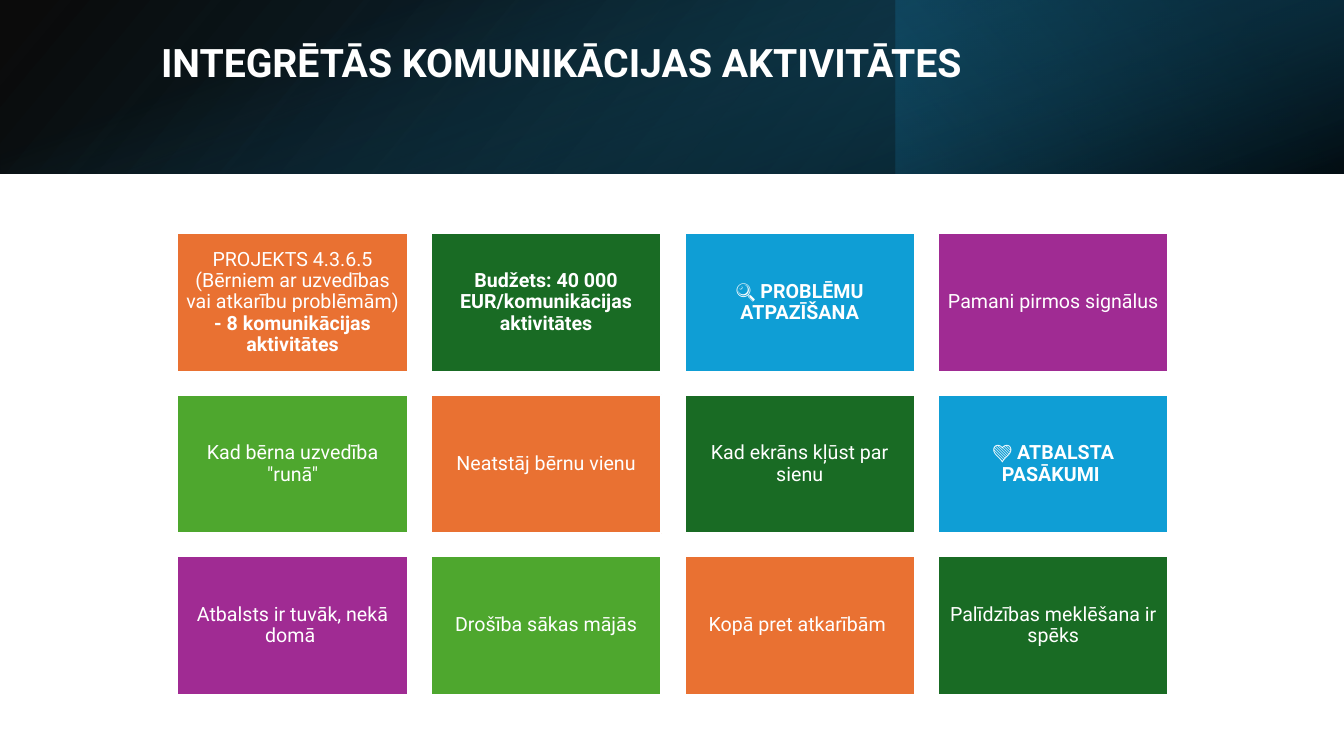
import pptx
import pptx.util
import pptx.dml.color
import pptx.enum.shapes
import pptx.enum.text
import pptx.oxml
import pptx.oxml.ns
from pptx.util import Cm

# Content: each tile is a list of (text, bold) spans
TITLE = "INTEGRĒTĀS KOMUNIKĀCIJAS AKTIVITĀTES"
TILES = [
    [("PROJEKTS 4.3.6.5 (Bērniem ar uzvedības vai atkarību problēmām) ", False),
     ("- 8 komunikācijas aktivitātes", True)],
    [("Budžets: 40 000 EUR/komunikācijas aktivitātes", True)],
    [("🔍 PROBLĒMU ATPAZĪŠANA", True)],
    [("Pamani pirmos signālus", False)],
    [("Kad bērna uzvedība \"runā\"", False)],
    [("Neatstāj bērnu vienu", False)],
    [("Kad ekrāns kļūst par sienu", False)],
    [("💚 ATBALSTA PASĀKUMI ", True)],
    [("Atbalsts ir tuvāk, nekā domā ", False)],
    [("Drošība sākas mājās", False)],
    [("Kopā pret atkarībām ", False)],
    [("Palīdzības meklēšana ir spēks", False)],
]

THEME = {
    "font": "Roboto",
    "title_size": 28,
    "tile_size": 14,
    "text": "FFFFFF",
    "outline": "FFFFFF",
    "tiles": ["E97132", "196B24", "0F9ED5", "A02B93", "4EA72E"],
    # Gradient stops: position %, colour, opacity %
    "band_base": [(0, "000000", 96), (100, "104862", 100)],
    "band_corner": [(19, "0B3041", 68), (100, "156082", 79)],
    "band_shade": [(23, "156082", 0), (99, "000000", 74)],
}

# Layout in centimetres
PAGE_W, PAGE_H = 33.87, 19.05
BAND_H = 4.38
COLUMNS = 4
GRID_LEFT, GRID_TOP = 4.47, 5.88
TILE_W, TILE_H, GAP = 5.81, 3.49, 0.58

RECTANGLE = pptx.enum.shapes.MSO_SHAPE.RECTANGLE
MIDDLE = pptx.enum.text.MSO_ANCHOR.MIDDLE
TOP = pptx.enum.text.MSO_ANCHOR.TOP
CENTER = pptx.enum.text.PP_ALIGN.CENTER
LEFT = pptx.enum.text.PP_ALIGN.LEFT


def colour(code):
    return pptx.dml.color.RGBColor.from_string(code)


def add_box(page, left, top, width, height):
    box = page.shapes.add_shape(RECTANGLE, Cm(left), Cm(top), Cm(width), Cm(height))
    box.shadow.inherit = False
    return box


def add_gradient(page, left, top, width, height, stops, angle, turn=0, mirrored=False):
    box = add_box(page, left, top, width, height)
    box.rotation = turn
    box.line.fill.background()
    properties = box._element.spPr
    if mirrored:
        properties.find(pptx.oxml.ns.qn("a:xfrm")).set("flipH", "1")
    marks = "".join(
        f'<a:gs pos="{position * 1000}"><a:srgbClr val="{code}">'
        f'<a:alpha val="{opacity * 1000}"/></a:srgbClr></a:gs>'
        for position, code, opacity in stops)
    gradient = pptx.oxml.parse_xml(
        f'<a:gradFill {pptx.oxml.ns.nsdecls("a")} rotWithShape="1"><a:gsLst>{marks}</a:gsLst>'
        f'<a:lin ang="{angle * 60000}" scaled="0"/></a:gradFill>')
    properties.find(pptx.oxml.ns.qn("a:prstGeom")).addnext(gradient)


def write_text(box, spans, size, align=LEFT, anchor=TOP, side=0.25, edge=0.13):
    frame = box.text_frame
    frame.word_wrap = True
    frame.vertical_anchor = anchor
    frame.margin_left = frame.margin_right = Cm(side)
    frame.margin_top = frame.margin_bottom = Cm(edge)
    para = frame.paragraphs[0]
    para.alignment = align
    para.line_spacing = 0.9
    for text, bold in spans:
        span = para.add_run()
        span.text = text
        span.font.name = THEME["font"]
        span.font.size = pptx.util.Pt(size)
        span.font.bold = bold
        span.font.color.rgb = colour(THEME["text"])


def main():
    deck = pptx.Presentation()
    deck.slide_width, deck.slide_height = Cm(PAGE_W), Cm(PAGE_H)
    page = deck.slides.add_slide(deck.slide_layouts[6])

    # Header band: three layered gradients
    add_gradient(page, 0, 0, PAGE_W, BAND_H, THEME["band_base"], 140, mirrored=True)
    add_gradient(page, PAGE_W * 2 / 3, 0, PAGE_W / 3, BAND_H, THEME["band_corner"], 320, turn=180)
    # The upright strip is centred on the band, then turned to lie along it
    add_gradient(page, (PAGE_W - BAND_H) / 2, (BAND_H - PAGE_W) / 2, BAND_H, PAGE_W,
                 THEME["band_shade"], 340, turn=90)

    # Title
    title = page.shapes.add_textbox(Cm(3.81), Cm(0.97), Cm(27.89), Cm(2.44))
    write_text(title, [(TITLE, True)], THEME["title_size"])

    # Tile grid, colours repeating in order
    for index, spans in enumerate(TILES):
        row, column = divmod(index, COLUMNS)
        tile = add_box(page, GRID_LEFT + column * (TILE_W + GAP),
                       GRID_TOP + row * (TILE_H + GAP), TILE_W, TILE_H)
        tile.fill.solid()
        tile.fill.fore_color.rgb = colour(THEME["tiles"][index % len(THEME["tiles"])])
        tile.line.color.rgb = colour(THEME["outline"])
        tile.line.width = pptx.util.Pt(1.5)
        write_text(tile, spans, THEME["tile_size"], align=CENTER, anchor=MIDDLE,
                   side=0.15, edge=0.15)

    deck.save("out.pptx")


if __name__ == "__main__":
    main()
